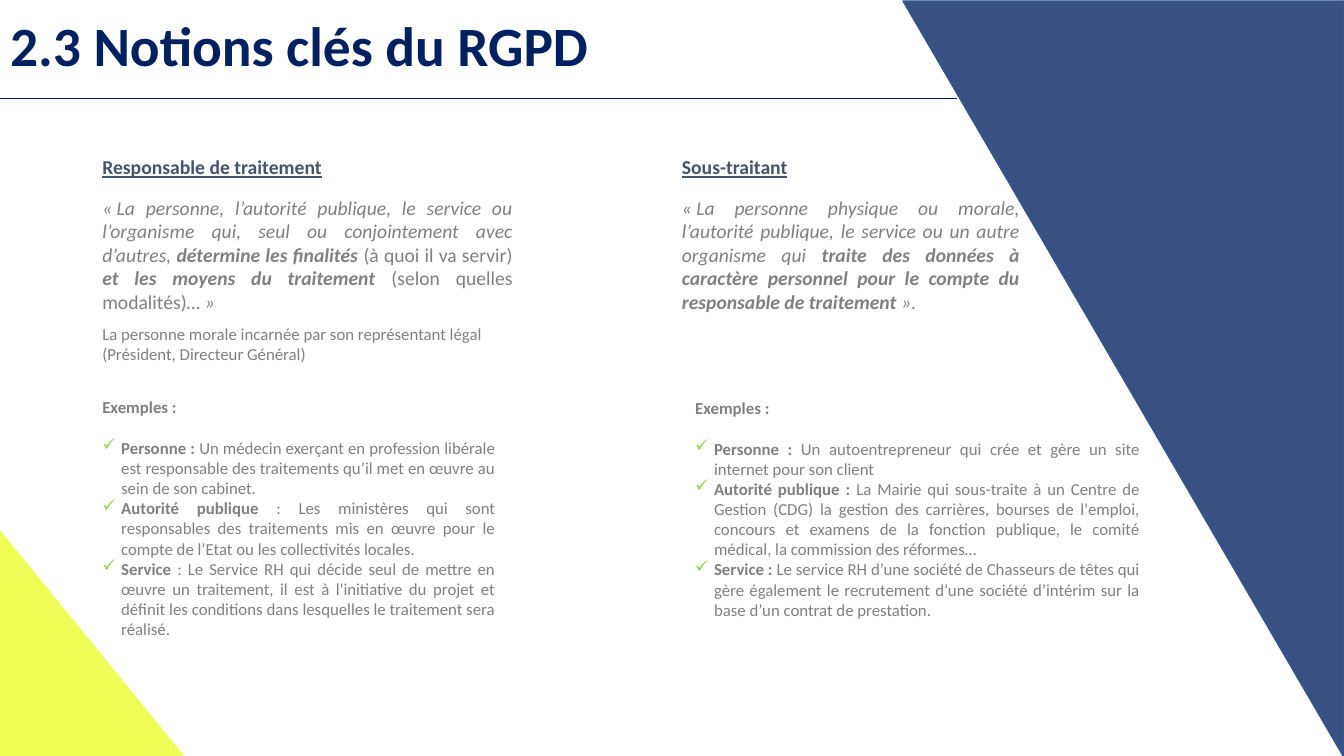
from lxml import etree
from pptx import Presentation
from pptx import util as u
from pptx.dml.color import RGBColor
from pptx.enum import shapes, text
from pptx.oxml import ns

COLORS = {
    "navy": "002060", "navy_edge": "325491", "yellow": "F0FF58",
    "heading": "44546A", "body": "808080", "check": "92D050",
}
FONT = "Calibri"
LEFT, JUSTIFY = text.PP_ALIGN.LEFT, text.PP_ALIGN.JUSTIFY

# Runs are (wording, style): b bold, i italic, u underlined.
CONTROLLER_DEFINITION = [
    ("«\u00a0La personne, l’autorité publique, le service ou l’organisme qui, seul ou "
     "conjointement avec d’autres, ", "i"),
    ("détermine les finalités ", "bi"),
    ("(à quoi il va servir)", ""),
    (" et les moyens du traitement ", "bi"),
    ("(selon quelles modalités)…", ""),
    ("\u00a0»", "i"),
]
CONTROLLER_NOTE = ("La personne morale incarnée par son représentant légal "
                   "(Président, Directeur Général)")
CONTROLLER_EXAMPLES = [
    ("Personne : ", "Un médecin exerçant en profession libérale est responsable des "
     "traitements qu’il met en œuvre au sein de son cabinet."),
    ("Autorité publique ", ": Les ministères qui sont responsables des traitements mis en "
     "œuvre pour le compte de l’Etat ou les collectivités locales."),
    ("Service ", ": Le Service RH qui décide seul de mettre en œuvre un traitement, il est à "
     "l'initiative du projet et définit les conditions dans lesquelles le traitement sera "
     "réalisé."),
]
PROCESSOR_DEFINITION = [
    ("«\u00a0La personne physique ou morale, l’autorité publique, le service ou un autre "
     "organisme qui ", "i"),
    ("traite des données à caractère personnel pour le compte du responsable de traitement",
     "bi"),
    ("\u00a0».", "i"),
]
PROCESSOR_EXAMPLES = [
    ("Personne : ", "Un autoentrepreneur qui crée et gère un site internet pour son client"),
    ("Autorité publique : ", "La Mairie qui sous-traite à un Centre de Gestion (CDG) la "
     "gestion des carrières, bourses de l'emploi, concours et examens de la fonction publique, "
     "le comité médical, la commission des réformes…"),
    ("Service : ", "Le service RH d’une société de Chasseurs de têtes qui gère également le "
     "recrutement d’une société d’intérim sur la base d’un contrat de prestation."),
]


def rgb(name):
    return RGBColor.from_string(COLORS[name])


def points(box):
    return [u.Pt(length) for length in box]


def add_triangle(slide, box, fill, edge, rotation=0, opacity=100):
    triangle = slide.shapes.add_shape(shapes.MSO_SHAPE.RIGHT_TRIANGLE, *points(box))
    triangle.shadow.inherit = False
    triangle.rotation = rotation
    triangle.fill.solid()
    triangle.fill.fore_color.rgb = rgb(fill)
    triangle.line.color.rgb = rgb(edge)
    triangle.line.width = u.Pt(1)
    if opacity < 100:
        color = triangle.fill._xPr.find(".//" + ns.qn("a:srgbClr"))
        etree.SubElement(color, ns.qn("a:alpha"), val=str(opacity * 1000))


def add_rule(slide, left, right, y):
    rule = slide.shapes.add_connector(
        shapes.MSO_CONNECTOR.STRAIGHT, *points((left, y, right, y)))
    rule.line.color.rgb = rgb("navy")
    rule.line.width = u.Pt(1)
    etree.SubElement(rule._element.spPr, ns.qn("a:effectLst"))


def set_title(slide, box, wording):
    title = slide.shapes.title
    title.left, title.top, title.width, title.height = points(box)
    frame = title.text_frame
    frame.text = wording
    frame.vertical_anchor = text.MSO_ANCHOR.MIDDLE
    paragraph = frame.paragraphs[0]
    paragraph.alignment = LEFT
    paragraph.line_spacing = 0.9
    font = paragraph.font
    font.name, font.size, font.bold = FONT, u.Pt(39.6), True
    font.color.rgb = rgb("navy")


def add_text_frame(slide, box):
    frame = slide.shapes.add_textbox(*points(box)).text_frame
    frame.word_wrap = True
    return frame


def add_paragraph(frame, runs, size, color="body", alignment=JUSTIFY, gap=0):
    """Append a paragraph, filling the frame's first one if it is still unused."""
    first = frame.paragraphs[0]
    paragraph = frame.add_paragraph() if first.runs else first
    paragraph.alignment = alignment
    paragraph.space_before = u.Pt(gap)
    font = paragraph.font
    font.name, font.size = FONT, u.Pt(size)
    font.color.rgb = rgb(color)
    for wording, style in runs:
        run = paragraph.add_run()
        run.text = wording
        run.font.bold = "b" in style
        run.font.italic = "i" in style
        run.font.underline = "u" in style
    return paragraph


def add_check_bullet(paragraph, indent=13.5):
    properties = paragraph._p.get_or_add_pPr()
    properties.set("marL", str(u.Pt(indent)))
    properties.set("indent", str(-u.Pt(indent)))
    bullet_color = etree.Element(ns.qn("a:buClr"))
    etree.SubElement(bullet_color, ns.qn("a:srgbClr"), val=COLORS["check"])
    bullet = etree.Element(ns.qn("a:buChar"), char="✓")
    default_font = properties.find(ns.qn("a:defRPr"))
    default_font.addprevious(bullet_color)
    default_font.addprevious(bullet)


def add_definition(slide, box, heading, definition, note=None):
    frame = add_text_frame(slide, box)
    add_paragraph(frame, [(heading, "bu")], 14, "heading", LEFT)
    add_paragraph(frame, definition, 14, gap=12.2)
    if note:
        add_paragraph(frame, [(note, "")], 12, alignment=LEFT, gap=7.3)


def add_examples(slide, box, examples):
    frame = add_text_frame(slide, box)
    add_paragraph(frame, [("Exemples :", "b")], 12)
    for index, (label, example) in enumerate(examples):
        gap = 0 if index else 14.6
        add_check_bullet(add_paragraph(frame, [(label, "b"), (example, "")], 12, gap=gap))


def build_slide(presentation):
    slide = presentation.slides.add_slide(presentation.slide_layouts[5])
    add_triangle(slide, (645, 0.7, 314.8, 540), "navy", "navy_edge", 180, 78)
    set_title(slide, (0, 11.5, 828, 46), "2.3 Notions clés du RGPD")
    add_definition(slide, (66, 107.3, 307.4, 163), "Responsable de traitement",
                   CONTROLLER_DEFINITION, CONTROLLER_NOTE)
    add_examples(slide, (66, 280, 295, 181.5), CONTROLLER_EXAMPLES)
    add_definition(slide, (480, 107.3, 255.6, 138), "Sous-traitant", PROCESSOR_DEFINITION)
    add_examples(slide, (489.5, 280.5, 332, 167), PROCESSOR_EXAMPLES)
    add_triangle(slide, (0, 379.5, 131, 160.5), "yellow", "yellow")
    add_rule(slide, 0, 683.5, 70.5)


def main():
    presentation = Presentation()
    presentation.slide_width, presentation.slide_height = points((960, 540))
    build_slide(presentation)
    presentation.save("out.pptx")


if __name__ == "__main__":
    main()
